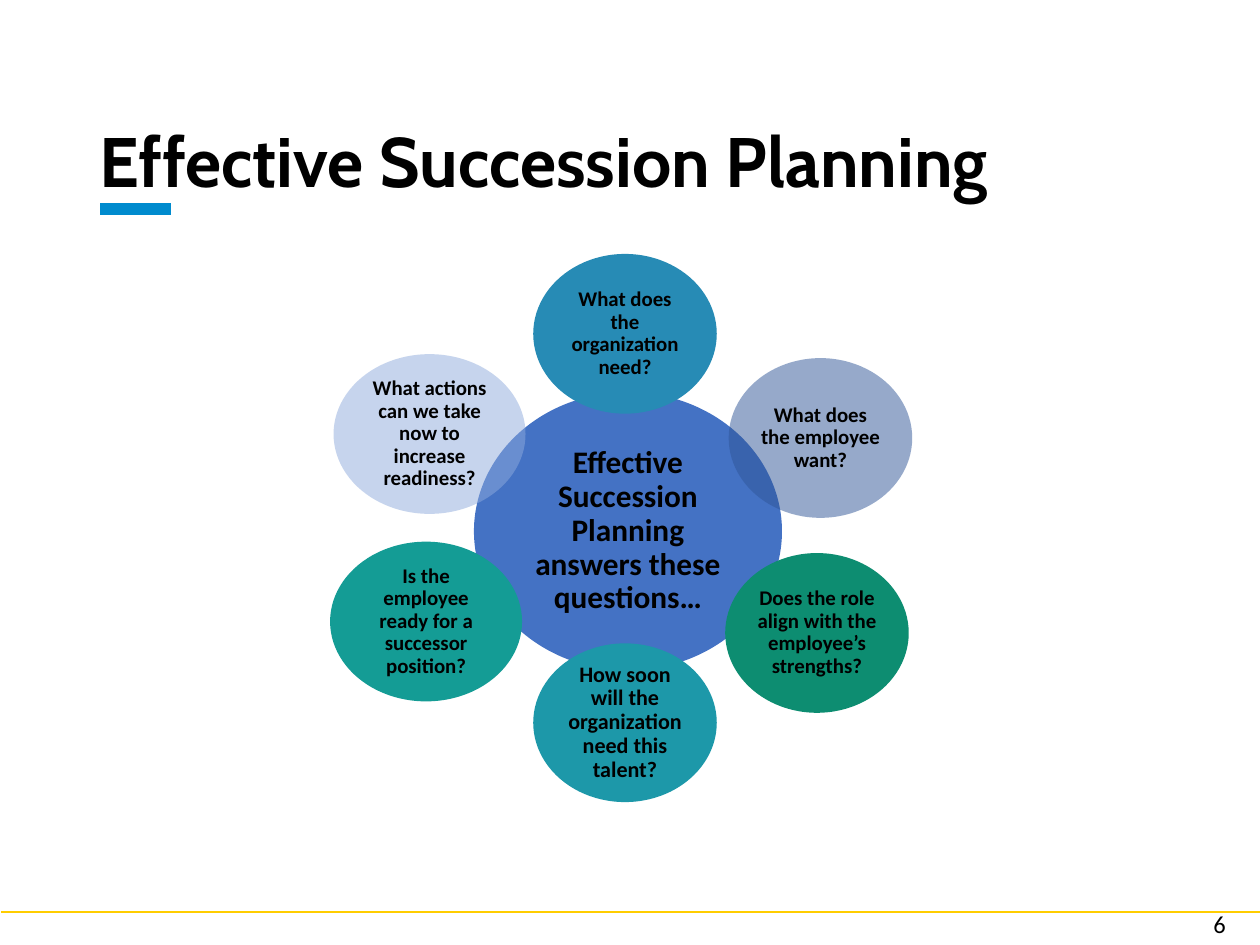
import pptx
import pptx.util
import pptx.dml.color
import pptx.enum.shapes
import pptx.enum.text
import pptx.oxml
import pptx.oxml.ns
from pptx.util import Cm

HUB = ("Effective Succession Planning answers these questions…",
       12.66, 10.71, 6.21, 5.61, "4472C4", 17.9, 100)

# text, centre x, centre y, width, height, colour, text size, opacity in percent
PETALS = [
    ("What does the employee want?", 16.54, 8.83, 3.7, 3.22, "2F5597", 11.9, 50),
    ("What does the organization need?", 12.6, 6.73, 3.7, 3.22, "278BB5", 11.9, 100),
    ("How soon will the organization need this talent?",
     12.6, 14.57, 3.7, 3.2, "1D98A9", 12.6, 100),
    ("What actions can we take now to increase readiness?",
     8.66, 8.75, 3.87, 3.22, "8FAADC", 11.9, 50),
    ("Does the role align with the employee’s strengths?",
     16.47, 12.76, 3.7, 3.22, "0D8D71", 11.9, 100),
    ("Is the employee ready for a successor position?",
     8.59, 12.53, 3.87, 3.22, "149C95", 11.9, 100),
]


def color(text):
    return pptx.dml.color.RGBColor.from_string(text)


def write(frame, text, face, size, bold=True):
    frame.text = text
    par = frame.paragraphs[0]
    par.font.name = face
    par.font.size = pptx.util.Pt(size)
    par.font.bold = bold
    par.font.color.rgb = color("000000")
    return par


def label(slide, box, text, face, size, bold, wrap):
    frame = slide.shapes.add_textbox(*map(Cm, box)).text_frame
    frame.word_wrap = wrap
    par = write(frame, text, face, size, bold)
    return frame, par


def rule(slide, left, right, y, tint, width):
    line = slide.shapes.add_connector(
        pptx.enum.shapes.MSO_CONNECTOR.STRAIGHT, Cm(left), Cm(y), Cm(right), Cm(y))
    line.line.color.rgb = color(tint)
    line.line.width = pptx.util.Pt(width)
    props = line._element.spPr
    props.append(pptx.oxml.parse_xml(
        "<a:effectLst %s/>" % pptx.oxml.ns.nsdecls("a")))


def fade(shape, percent):
    """Make the solid fill of a shape partly clear."""
    tint = shape._element.spPr.find(".//" + pptx.oxml.ns.qn("a:srgbClr"))
    tint.append(pptx.oxml.parse_xml(
        '<a:alpha %s val="%d"/>' % (pptx.oxml.ns.nsdecls("a"), percent * 1000)))


def bubble(slide, text, x, y, width, height, tint, size, opacity):
    oval = slide.shapes.add_shape(
        pptx.enum.shapes.MSO_SHAPE.OVAL, Cm(x - width / 2), Cm(y - height / 2),
        Cm(width), Cm(height))
    oval.shadow.inherit = False
    oval.fill.solid()
    oval.fill.fore_color.rgb = color(tint)
    oval.line.fill.background()
    if opacity < 100:
        fade(oval, opacity)
    frame = oval.text_frame
    frame.word_wrap = True
    frame.vertical_anchor = pptx.enum.text.MSO_ANCHOR.MIDDLE
    frame.margin_left = frame.margin_right = Cm(0.08)
    frame.margin_top = frame.margin_bottom = Cm(0.08)
    par = write(frame, text, "Calibri", size)
    par.alignment = pptx.enum.text.PP_ALIGN.CENTER
    par.line_spacing = 0.9


def main():
    deck = pptx.Presentation()
    deck.slide_width, deck.slide_height = Cm(25.4), Cm(19.05)
    slide = deck.slides.add_slide(deck.slide_layouts[6])

    label(slide, (24.21, 18.21, 1.09, 0.86), "6", "Calibri", 14, False, False)
    rule(slide, 0.03, 25.43, 18.39, "FFCD00", 1)
    rule(slide, 2.02, 3.45, 4.22, "008BCE", 6.75)
    frame, par = label(slide, (1.75, 0.23, 22.38, 3.99),
                       "Effective Succession Planning", "Cabin", 40, True, True)
    frame.vertical_anchor = pptx.enum.text.MSO_ANCHOR.BOTTOM
    par.line_spacing = 0.9

    for item in [HUB] + PETALS:
        bubble(slide, *item)
    deck.save("out.pptx")


if __name__ == "__main__":
    main()
